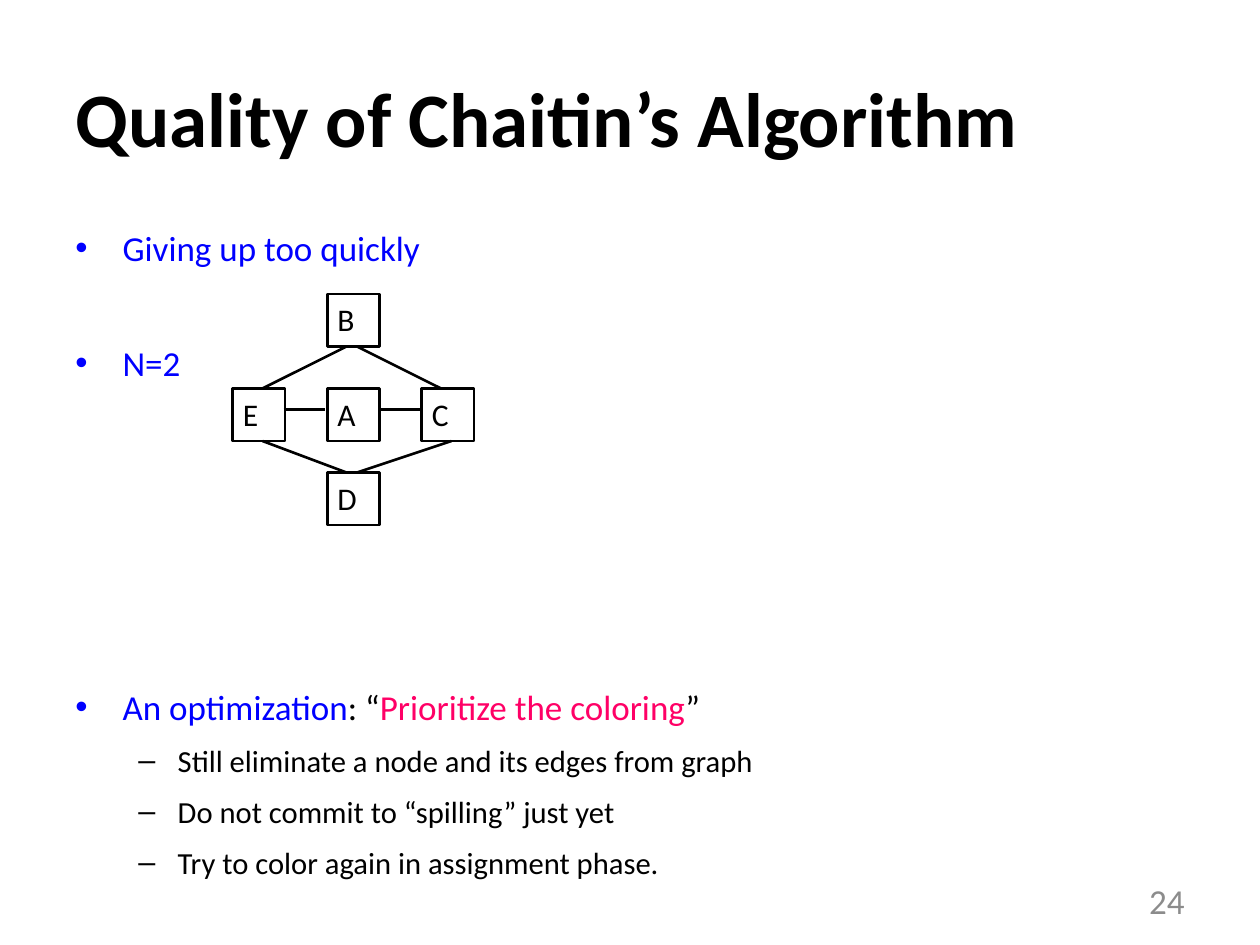
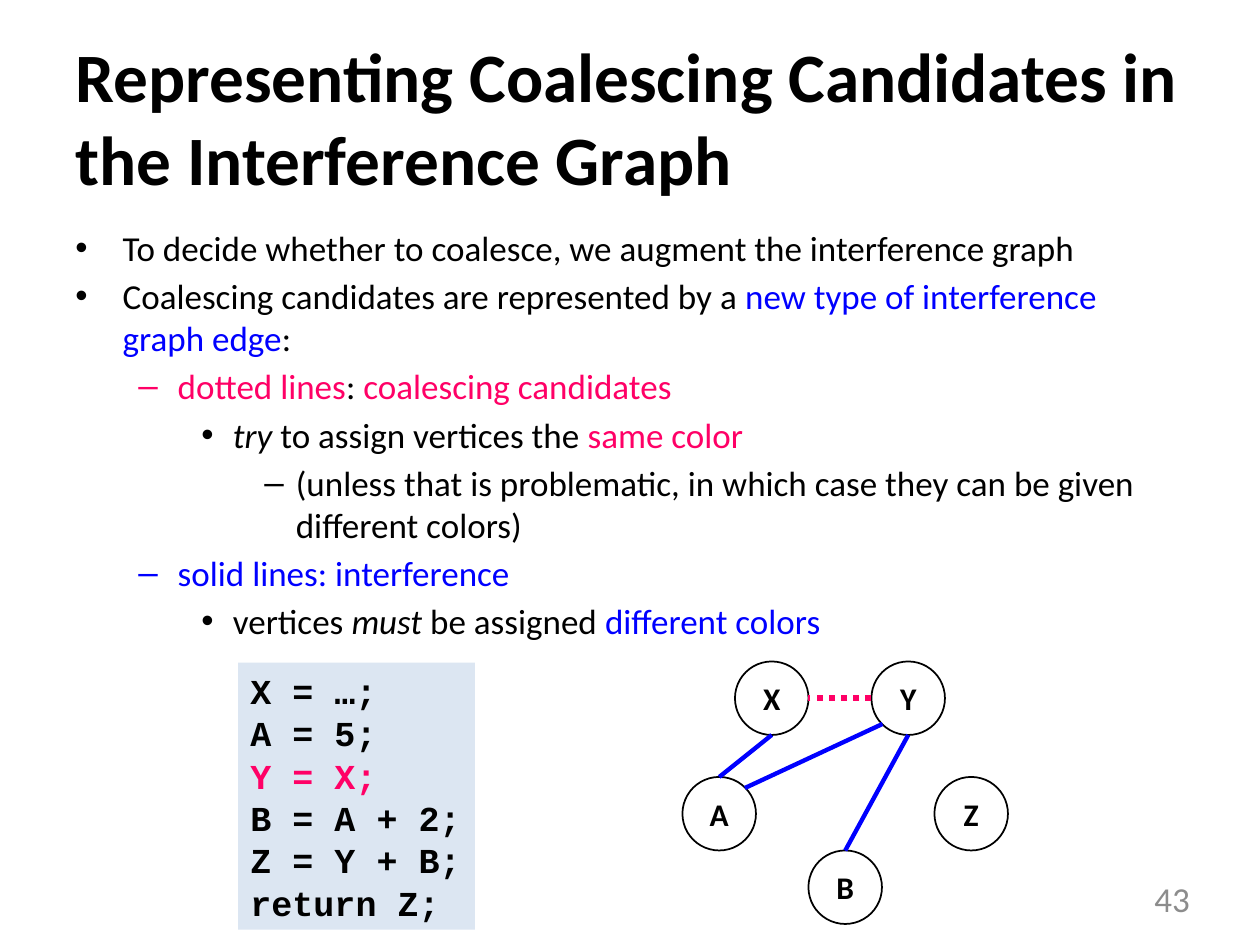
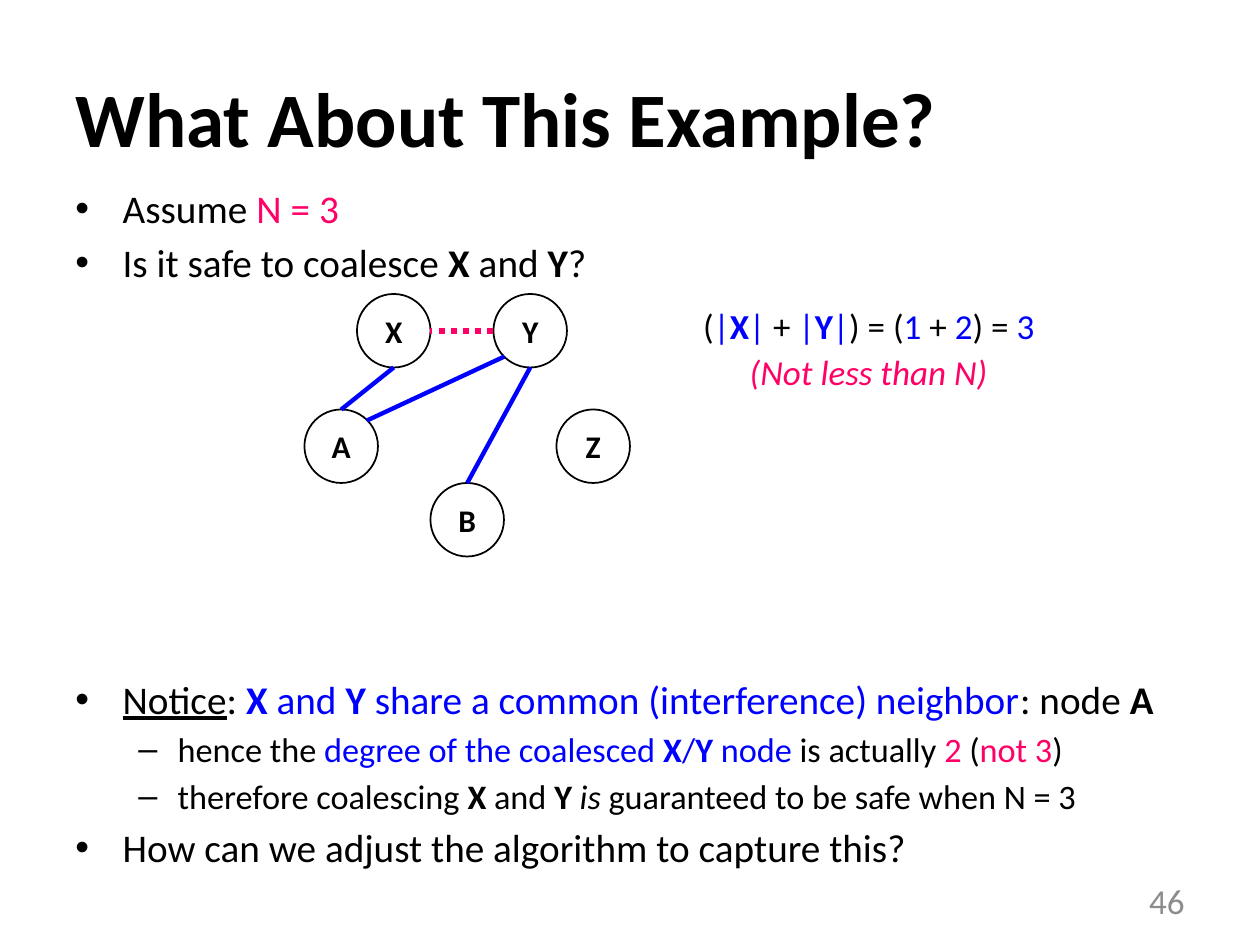
from lxml.etree import SubElement
from pptx import Presentation
from pptx.dml.color import RGBColor
from pptx.enum.dml import MSO_LINE
from pptx.enum.shapes import MSO_CONNECTOR, MSO_SHAPE
from pptx.enum.text import MSO_ANCHOR, MSO_AUTO_SIZE, PP_ALIGN
from pptx.oxml.ns import qn
from pptx.util import Pt

BLACK, BLUE, PINK, GRAY, PALE_BLUE = "000000", "0000FF", "FF0066", "8C8C8C", "DCE6F2"
BODY_FONT, CODE_FONT = "Calibri", "Courier New"
LINE_HEIGHT = 1.22
SPACE_BEFORE = 0.175  # share of the text size

STYLES = {
    "blue": {"color": BLUE},
    "pink": {"color": PINK},
    "gray": {"color": GRAY},
    "strong": {"bold": True},
    "italic": {"italic": True},
    "underline": {"underline": True},
    "code": {"name": CODE_FONT},
}

# Bullet, text indent and hanging indent of each outline level
LEVELS = [("•", 27, 27), ("–", 58.5, 22.5), ("•", 90, 18), ("–", 126, 18)]

# Points on a node, as shares of its size
ANCHORS = {
    "top": (0.5, 0), "bottom": (0.5, 1), "left": (0, 0.5), "right": (1, 0.5),
    "lower left": (0.15, 0.85), "upper right": (0.85, 0.15),
}
NODE_SIZE = 42
NODES = {"X": (30, 0), "Y": (108, 0), "A": (0, 66), "Z": (144, 66), "B": (72, 108)}
INTERFERENCES = [("Y", "lower left", "A", "upper right"),
                 ("X", "bottom", "A", "top"),
                 ("Y", "bottom", "B", "top")]

BOX_SIZE = 30
BOXES = {"B": (187, 168), "E": (133, 222), "A": (187, 222), "C": (241, 222), "D": (187, 270)}
BOX_EDGES = [(150, 222, 198, 198), (204, 198, 252, 222), (162, 234, 186, 234),
             (216, 234, 240, 234), (150, 252, 198, 270), (258, 252, 204, 270)]

QUALITY_OUTLINE = [
    (0, 0, [("Giving up too quickly", "blue")]),
    (0, 1, [("N=2", "blue")]),
    (0, 5, [("An optimization", "blue"), (": “", ""),
            ("Prioritize the coloring", "pink"), ("”", "")]),
    (1, 0, [("Still eliminate a node and its edges from graph", "")]),
    (1, 0, [("Do not commit to “spilling” just yet", "")]),
    (1, 0, [("Try to color again in assignment phase.", "")]),
]
CANDIDATES_OUTLINE = [
    (0, 0, [("To decide whether to coalesce, we augment the interference graph", "")]),
    (0, 0, [("Coalescing candidates are represented by a ", ""),
            ("new type of interference graph edge", "blue"), (":", "")]),
    (1, 0, [("dotted lines", "pink"), (": ", ""), ("coalescing candidates", "pink")]),
    (2, 0, [("try", "italic"), (" to assign vertices the ", ""), ("same color", "pink")]),
    (3, 0, [("(unless that is problematic, in which case they can be given "
             "different colors)", "")]),
    (1, 0, [("solid lines: interference", "blue")]),
    (2, 0, [("vertices ", ""), ("must", "italic"), (" be assigned ", ""),
            ("different colors", "blue")]),
]
EXAMPLE_OUTLINE = [
    (0, 0, [("Assume ", ""), ("N = 3", "pink")]),
    (0, 0, [("Is it safe to coalesce ", ""), ("X", "strong"), (" and ", ""),
            ("Y", "strong"), ("?", "")]),
    (0, 7, [("Notice", "underline"), (": ", ""), ("X", "strong blue"), (" and ", "blue"),
            ("Y", "strong blue"), (" share a common (interference) neighbor", "blue"),
            (": node ", ""), ("A", "strong")]),
    (1, 0, [("hence the ", ""), ("degree of the coalesced ", "blue"), ("X", "strong blue"),
            ("/", "blue"), ("Y", "strong blue"), (" node", "blue"), (" is actually ", ""),
            ("2", "pink"), (" (", ""), ("not 3", "pink"), (")", "")]),
    (1, 0, [("therefore coalescing ", ""), ("X", "strong"), (" and ", ""), ("Y ", "strong"),
            ("is", "italic"), (" guaranteed to be safe when N = 3", "")]),
    (0, 0, [("How can we adjust the algorithm to capture this?", "")]),
]
CODE = [[("X = …;", "code strong")], [("A = 5;", "code strong")],
        [("Y = X;", "code strong pink")], [("B = A + 2;", "code strong")],
        [("Z = Y + B;", "code strong")], [("return Z;", "code strong")]]
DEGREE_SUM = [
    [("(", ""), ("|", "blue"), ("X", "strong blue"), ("|", "blue"), (" + ", ""),
     ("|", "blue"), ("Y", "strong blue"), ("|", "blue"), (") = (", ""), ("1", "blue"),
     (" + ", ""), ("2", "blue"), (") = ", ""), ("3", "blue")],
    [("(Not less than N)", "italic pink")],
]


def rgb(color):
    return RGBColor.from_string(color)


def run_format(style, size):
    values = {"name": BODY_FONT, "size": Pt(size), "color": BLACK}
    for word in style.split():
        values.update(STYLES[word])
    return values


def add_runs(paragraph, runs, size):
    for text, style in runs:
        run = paragraph.add_run()
        run.text = text
        for name, value in run_format(style, size).items():
            if name == "color":
                run.font.color.rgb = rgb(value)
            else:
                setattr(run.font, name, value)


def write(frame, lines, size, **paragraph_format):
    """Fill a text frame with one paragraph for each list of runs."""
    for index, runs in enumerate(lines):
        paragraph = frame.add_paragraph() if index else frame.paragraphs[0]
        for name, value in paragraph_format.items():
            setattr(paragraph, name, value)
        add_runs(paragraph, runs, size)


def add_text_box(slide, bounds, wrap=True):
    shape = slide.shapes.add_textbox(*map(Pt, bounds))
    shape.text_frame.word_wrap = wrap
    return shape


def add_node(slide, kind, bounds, line_width):
    shape = slide.shapes.add_shape(kind, *map(Pt, bounds))
    shape.shadow.inherit = False
    shape.fill.background()
    shape.line.color.rgb = rgb(BLACK)
    shape.line.width = Pt(line_width)
    return shape.text_frame


def add_edge(slide, ends, color, width, dash=None):
    edge = slide.shapes.add_connector(MSO_CONNECTOR.STRAIGHT, *map(Pt, ends))
    edge.line.color.rgb = rgb(color)
    edge.line.width = Pt(width)
    if dash:
        edge.line.dash_style = dash
    SubElement(edge._element.spPr, qn("a:effectLst"))


def set_bullet(paragraph, level, color):
    bullet, indent, hanging = LEVELS[level]
    properties = paragraph._p.get_or_add_pPr()
    properties.set("marL", str(Pt(indent)))
    properties.set("indent", str(-Pt(hanging)))
    bullet_color = SubElement(properties, qn("a:buClr"))
    SubElement(bullet_color, qn("a:srgbClr"), val=color)
    SubElement(properties, qn("a:buFont"), typeface="Arial")
    SubElement(properties, qn("a:buChar"), char=bullet)


def add_outline(slide, bounds, items, sizes, space_after=0):
    """Add bullets given as (level, lines left free above, runs)."""
    frame = add_text_box(slide, bounds).text_frame
    for index, (level, free_lines, runs) in enumerate(items):
        paragraph = frame.add_paragraph() if index else frame.paragraphs[0]
        size = sizes[level]
        gap = size * SPACE_BEFORE
        free_space = free_lines * (size * LINE_HEIGHT + gap + space_after)
        paragraph.level = level
        paragraph.space_before = Pt(gap + free_space if index else 0)
        paragraph.space_after = Pt(space_after)
        set_bullet(paragraph, level, run_format(runs[0][1], size)["color"])
        add_runs(paragraph, runs, size)


def add_titled_slide(presentation, title, number, title_size=44, number_at=(516, 500.4)):
    slide = presentation.slides.add_slide(presentation.slide_layouts[5])
    shape = slide.shapes.title
    bounds = {"left": 36, "top": 21.6, "width": 648, "height": 90}
    for name, value in bounds.items():
        setattr(shape, name, Pt(value))
    shape.text_frame.auto_size = MSO_AUTO_SIZE.NONE
    shape.text_frame.vertical_anchor = MSO_ANCHOR.MIDDLE
    write(shape.text_frame, [[(title, "strong")]], title_size, alignment=PP_ALIGN.LEFT)

    frame = add_text_box(slide, (*number_at, 168, 28.8)).text_frame
    frame.vertical_anchor = MSO_ANCHOR.MIDDLE
    write(frame, [[(number, "gray")]], 20, alignment=PP_ALIGN.RIGHT)
    return slide


def add_box_graph(slide):
    for label, position in BOXES.items():
        frame = add_node(slide, MSO_SHAPE.RECTANGLE, (*position, BOX_SIZE, BOX_SIZE), 1.5)
        frame.word_wrap = False
        frame.vertical_anchor = MSO_ANCHOR.TOP
        frame.margin_left = Pt(5.8)
        write(frame, [[(label, "")]], 18, alignment=PP_ALIGN.LEFT)
    for ends in BOX_EDGES:
        add_edge(slide, ends, BLACK, 1.5)


def add_interference_graph(slide, left, top):
    def point(label, anchor):
        x, y = NODES[label]
        across, down = ANCHORS[anchor]
        return left + x + across * NODE_SIZE, top + y + down * NODE_SIZE

    for label, (x, y) in NODES.items():
        bounds = (left + x, top + y, NODE_SIZE, NODE_SIZE)
        frame = add_node(slide, MSO_SHAPE.OVAL, bounds, 1)
        frame.word_wrap = False
        frame.vertical_anchor = MSO_ANCHOR.MIDDLE
        write(frame, [[(label, "strong")]], 18, alignment=PP_ALIGN.CENTER)
    for start, start_anchor, end, end_anchor in INTERFERENCES:
        ends = point(start, start_anchor) + point(end, end_anchor)
        add_edge(slide, ends, BLUE, 2.5)
    candidate = point("Y", "left") + point("X", "right")
    add_edge(slide, candidate, PINK, 3.5, MSO_LINE.ROUND_DOT)


def add_code(slide, bounds):
    shape = add_text_box(slide, bounds, wrap=False)
    shape.fill.solid()
    shape.fill.fore_color.rgb = rgb(PALE_BLUE)
    write(shape.text_frame, CODE, 20, line_spacing=Pt(24.2))


def add_quality_slide(presentation):
    slide = add_titled_slide(presentation, "Quality of Chaitin’s Algorithm", "24")
    add_outline(slide, (36, 126, 648, 356.4), QUALITY_OUTLINE, (20, 17.5), space_after=5)
    add_box_graph(slide)


def add_candidates_slide(presentation):
    title = "Representing Coalescing Candidates in the Interference Graph"
    slide = add_titled_slide(presentation, title, "43", 39.6, (519, 499))
    add_outline(slide, (36, 126, 648, 356.4), CANDIDATES_OUTLINE, (20, 20, 20, 20))
    add_code(slide, (136, 378.7, 135.4, 152.6))
    add_interference_graph(slide, 390, 378)


def add_example_slide(presentation):
    slide = add_titled_slide(presentation, "What About This Example?", "46")
    add_outline(slide, (36, 102, 654, 380), EXAMPLE_OUTLINE, (22.4, 19.6))
    add_interference_graph(slide, 174, 168)
    frame = add_text_box(slide, (392.4, 168, 208, 60.5), wrap=False).text_frame
    write(frame, DEGREE_SUM, 20, alignment=PP_ALIGN.CENTER, line_spacing=1.1)


def main():
    presentation = Presentation()
    presentation.slide_width, presentation.slide_height = Pt(720), Pt(540)
    add_quality_slide(presentation)
    add_candidates_slide(presentation)
    add_example_slide(presentation)
    presentation.save("out.pptx")


if __name__ == "__main__":
    main()
